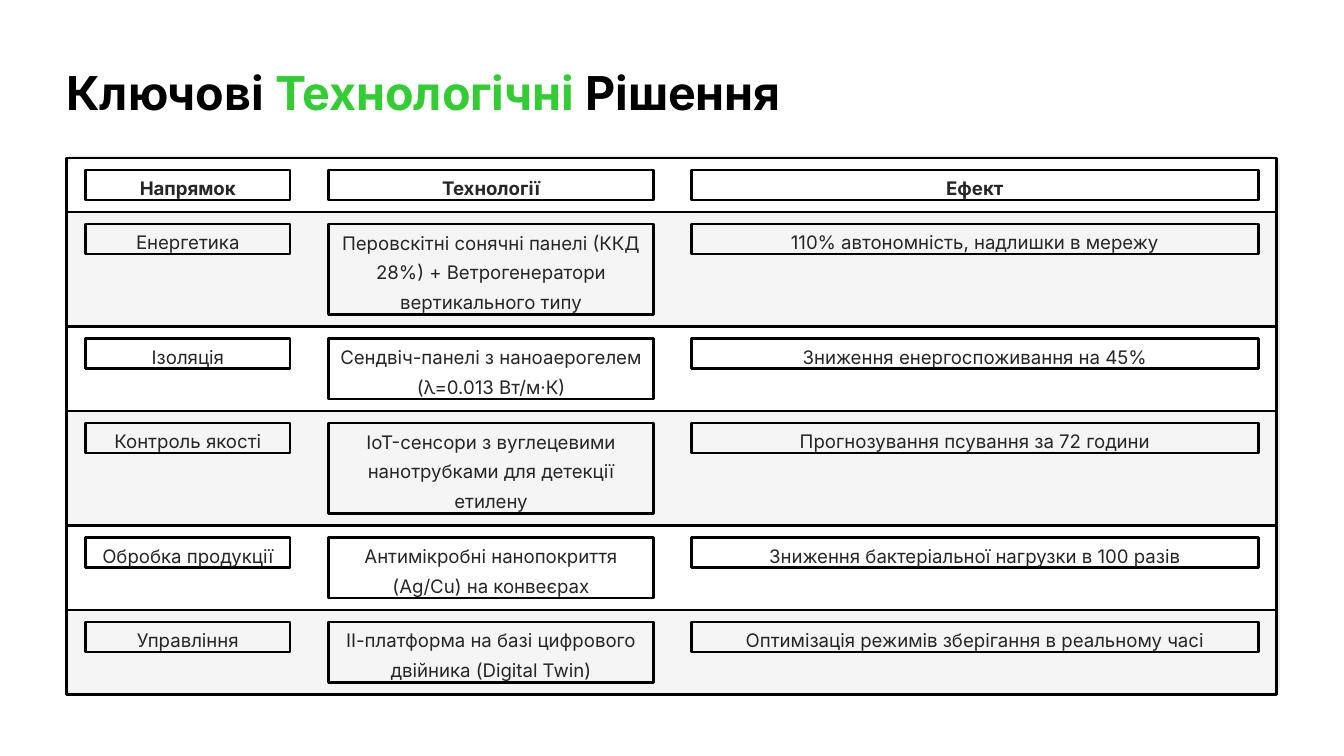
from dataclasses import dataclass

import lxml.etree
import pptx
import pptx.dml.color
import pptx.enum.shapes
import pptx.enum.text
import pptx.oxml.ns
import pptx.util

COLORS = {"bg": "FFFFFF", "ink": "000000", "accent": "32CD32", "text": "272525"}
FONT = "Inter"
SHAPE = pptx.enum.shapes.MSO_SHAPE
ALIGN = pptx.enum.text.PP_ALIGN

# Grid: one column and one row are each a hundredth of the slide
WIDTH, HEIGHT = pptx.util.Inches(16), pptx.util.Inches(9)
LEFT, TABLE_TOP, TABLE_WIDTH = 4.94, 20.89, 90.06
LINE, PAD = 4, 1.58
CELL_COLUMNS = [(6.38, 15.19), (24.44, 24.19), (51.44, 42.19)]


@dataclass
class Box:
    x: float
    y: float
    w: float
    h: float

    def emu(self) -> list[int]:
        return [round(self.x * WIDTH / 100), round(self.y * HEIGHT / 100),
                round(self.w * WIDTH / 100), round(self.h * HEIGHT / 100)]


@dataclass
class Run:
    text: str
    size: float
    color: str
    bold: bool = False


@dataclass
class Row:
    area: str
    technology: str
    effect: str
    lines: int
    fill: str
    bold: bool = False


ROWS = [
    Row("Напрямок", "Технології", "Ефект", 1, "bg", True),
    Row("Енергетика",
        "Перовскітні сонячні панелі (ККД 28%) + Ветрогенератори вертикального типу",
        "110% автономність, надлишки в мережу", 3, "ink"),
    Row("Ізоляція", "Сендвіч-панелі з наноаерогелем (λ=0.013 Вт/м·К)",
        "Зниження енергоспоживання на 45%", 2, "bg"),
    Row("Контроль якості",
        "IoT-сенсори з вуглецевими нанотрубками для детекції етилену",
        "Прогнозування псування за 72 години", 3, "ink"),
    Row("Обробка продукції", "Антимікробні нанопокриття (Ag/Cu) на конвеєрах",
        "Зниження бактеріальної нагрузки в 100 разів", 2, "bg"),
    Row("Управління", "ІІ-платформа на базі цифрового двійника (Digital Twin)",
        "Оптимізація режимів зберігання в реальному часі", 2, "ink"),
]


def rgb(name: str) -> pptx.dml.color.RGBColor:
    return pptx.dml.color.RGBColor.from_string(COLORS[name])


def set_alpha(sp, tags: list[str], percent: int) -> None:
    clr = sp._element.spPr.find("/".join(pptx.oxml.ns.qn(tag) for tag in tags))
    alpha = lxml.etree.SubElement(clr, pptx.oxml.ns.qn("a:alpha"))
    alpha.set("val", str(percent * 1000))


def add_outline(s, box: Box, kind=SHAPE.RECTANGLE, fill: str = ""):
    sp = s.shapes.add_shape(kind, *box.emu())
    sp.shadow.inherit = False
    if fill:
        sp.fill.solid()
        sp.fill.fore_color.rgb = rgb(fill)
        set_alpha(sp, ["a:solidFill", "a:srgbClr"], 4)
    else:
        sp.fill.background()
    sp.line.color.rgb = rgb("ink")
    sp.line.width = pptx.util.Pt(2.25)
    return sp


def write(sp, runs: list[Run], spacing: float, align, wrap: bool) -> None:
    tf = sp.text_frame
    frame_format = {"margin_left": 0, "margin_top": 0, "margin_right": 0,
                    "margin_bottom": 0, "word_wrap": wrap,
                    "vertical_anchor": pptx.enum.text.MSO_ANCHOR.TOP}
    for name, value in frame_format.items():
        setattr(tf, name, value)
    p = tf.paragraphs[0]
    p.alignment = align
    p.line_spacing = pptx.util.Pt(spacing)
    for run in runs:
        r = p.add_run()
        r.text = run.text
        font_format = {"name": FONT, "size": pptx.util.Pt(run.size), "bold": run.bold}
        for name, value in font_format.items():
            setattr(r.font, name, value)
        r.font.color.rgb = rgb(run.color)


def add_row(s, row: Row, top: float) -> float:
    height = row.lines * LINE + 2 * PAD
    add_outline(s, Box(LEFT, top, TABLE_WIDTH, height), fill=row.fill)
    texts = [row.area, row.technology, row.effect]
    line_counts = [1, row.lines, 1]
    for (x, w), text, lines in zip(CELL_COLUMNS, texts, line_counts):
        cell = add_outline(s, Box(x, top + PAD, w, lines * LINE))
        write(cell, [Run(text, 16, "text", row.bold)], 25.5, ALIGN.CENTER, lines > 1)
    return top + height


def main() -> None:
    prs = pptx.Presentation()
    prs.slide_width, prs.slide_height = WIDTH, HEIGHT
    s = prs.slides.add_slide(prs.slide_layouts[6])
    s.background.fill.solid()
    s.background.fill.fore_color.rgb = rgb("bg")

    # Title
    title = s.shapes.add_textbox(*Box(LEFT, 8, 53.75, 7.78).emu())
    write(title, [Run("Ключові ", 40, "ink", True),
                  Run("Технологічні", 40, "accent", True),
                  Run(" Рішення", 40, "ink", True)], 50.5, ALIGN.LEFT, False)

    # Rounded frame around the rows
    frame = add_outline(s, Box(LEFT, 20.78, 90.19, 71.11), SHAPE.ROUNDED_RECTANGLE)
    frame.adjustments[0] = 0.015
    set_alpha(frame, ["a:ln", "a:solidFill", "a:srgbClr"], 8)

    # Header and body rows
    top = TABLE_TOP
    for row in ROWS:
        top = add_row(s, row, top)

    prs.save("out.pptx")


if __name__ == "__main__":
    main()
